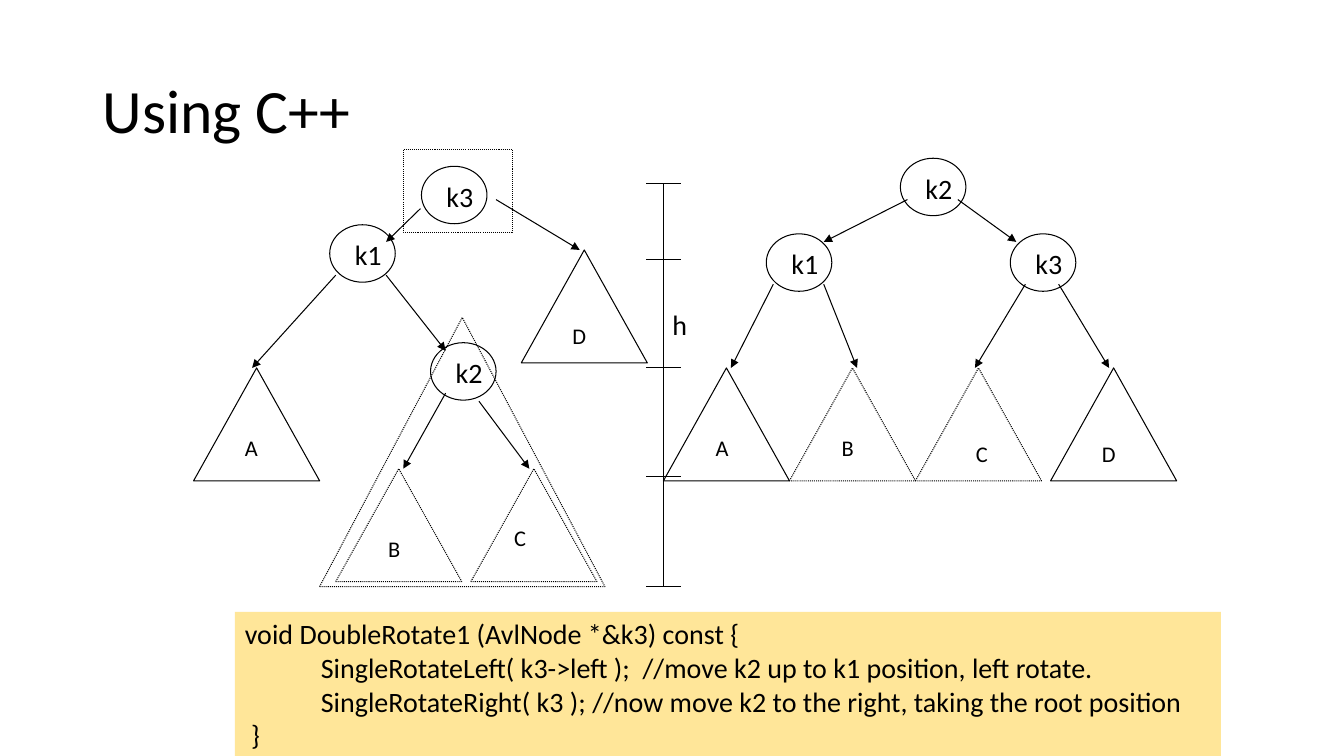
from lxml.etree import SubElement
from pptx import Presentation
from pptx.dml.color import RGBColor
from pptx.enum.dml import MSO_LINE
from pptx.enum.shapes import MSO_CONNECTOR, MSO_SHAPE
from pptx.enum.text import MSO_ANCHOR, PP_ALIGN
from pptx.oxml.ns import qn
from pptx.util import Pt

PX = 9144  # EMU per px, 100 px to the inch
COLORS = {"ink": "000000", "code": "FFE699"}
FONT = "Calibri"

# Content
TITLE = "Using C++"
CODE = [
    "void DoubleRotate1 (AvlNode *&k3) const {",
    "            SingleRotateLeft( k3->left );  //move k2 up to k1 position, left rotate.",
    "            SingleRotateRight( k3 ); //now move k2 to the right, taking the root position",
    " }",
]
# Tree nodes: key, left, top
NODES = [
    ("k3", 418, 165), ("k1", 327, 223), ("k2", 427, 340),
    ("k2", 893, 157), ("k1", 760, 232), ("k3", 1002, 232),
]
# Subtrees: name, left, top, label offset x, label offset y, dotted
SUBTREES = [
    ("A", 192, 365, 41, 61, False), ("B", 333, 465, 42, 61, True),
    ("C", 467, 465, 33, 50, True), ("D", 517, 248, 41, 67, False),
    ("A", 658, 365, 42, 61, False), ("B", 783, 365, 42, 61, True),
    ("C", 908, 365, 50, 67, True), ("D", 1042, 365, 41, 67, False),
]
# Tree edges: from x, from y, to x, to y
EDGES = [
    (492, 198, 575, 248), (417, 207, 383, 240), (333, 273, 250, 365),
    (383, 273, 442, 348), (442, 390, 400, 465), (475, 398, 525, 465),
    (900, 198, 817, 240), (950, 198, 1008, 240), (767, 282, 725, 365),
    (817, 282, 850, 365), (1017, 282, 967, 365), (1050, 282, 1100, 365),
]
LEVELS = [182, 257, 365, 473, 582]
AXIS_X, TICK_HALF = 658, 17
NODE_SIZE = (65, 57)
SUBTREE_SIZE = (125, 112)
LABEL_WIDTHS = {"A": 33, "B": 32, "C": 32, "D": 34}

deck = Presentation()
deck.slide_width, deck.slide_height = 1333 * PX, 750 * PX
slide = deck.slides.add_slide(deck.slide_layouts[5])


def emu(*lengths):
    return [length * PX for length in lengths]


def write(frame, lines, size, **frame_format):
    for name, value in frame_format.items():
        setattr(frame, name, value)
    for index, line in enumerate(lines):
        paragraph = frame.paragraphs[0] if index == 0 else frame.add_paragraph()
        paragraph.alignment = PP_ALIGN.LEFT
        run = paragraph.add_run()
        run.text = line
        for name, value in {"name": FONT, "size": Pt(size)}.items():
            setattr(run.font, name, value)
        run.font.color.rgb = RGBColor.from_string(COLORS["ink"])


def ink(line, dotted=False):
    line.color.rgb = RGBColor.from_string(COLORS["ink"])
    line.width = Pt(0.75)
    if dotted:
        line.dash_style = MSO_LINE.ROUND_DOT


def outline(kind, box, dotted=False):
    figure = slide.shapes.add_shape(kind, *emu(*box))
    figure.shadow.inherit = False
    figure.fill.background()
    ink(figure.line, dotted)


def label(text, box, size, wrap):
    area = slide.shapes.add_textbox(*emu(*box))
    write(area.text_frame, [text], size, word_wrap=wrap)


def connect(ends, arrow=False):
    link = slide.shapes.add_connector(MSO_CONNECTOR.STRAIGHT, *emu(*ends))
    ink(link.line)
    if arrow:
        SubElement(link.line._get_or_add_ln(), qn("a:tailEnd"), type="triangle")
    SubElement(link._element.spPr, qn("a:effectLst"))


# Title
title = slide.shapes.title
title.left, title.top, title.width, title.height = emu(92, 40, 1150, 145)
write(title.text_frame, [TITLE], 44, vertical_anchor=MSO_ANCHOR.MIDDLE, word_wrap=True)
title.text_frame.paragraphs[0].line_spacing = 0.9

# Height scale between the trees
connect((AXIS_X, LEVELS[0], AXIS_X, LEVELS[-1]))
for level in LEVELS:
    connect((AXIS_X - TICK_HALF, level, AXIS_X + TICK_HALF, level))
label("h", (657, 300, 35, 44), 20, False)

# Dotted frames around the root and the k2 subtree
outline(MSO_SHAPE.RECTANGLE, (400, 148, 108, 83), True)
outline(MSO_SHAPE.ISOSCELES_TRIANGLE, (317, 315, 283, 267), True)

# Trees
for key, left, top in NODES:
    outline(MSO_SHAPE.OVAL, (left, top, *NODE_SIZE))
    label(key, (left + 15, top + 8, 48, 43), 20, True)
for name, left, top, dx, dy, dotted in SUBTREES:
    outline(MSO_SHAPE.FLOWCHART_EXTRACT, (left, top, *SUBTREE_SIZE), dotted)
    label(name, (left + dx, top + dy, LABEL_WIDTHS[name], 37), 16, False)
for edge in EDGES:
    connect(edge, arrow=True)

# Code
code_box = slide.shapes.add_shape(MSO_SHAPE.RECTANGLE, *emu(233, 607, 978, 145))
code_box.shadow.inherit = False
code_box.fill.solid()
code_box.fill.fore_color.rgb = RGBColor.from_string(COLORS["code"])
code_box.line.fill.background()
write(code_box.text_frame, CODE, 20, vertical_anchor=MSO_ANCHOR.TOP, word_wrap=True)

deck.save("out.pptx")
